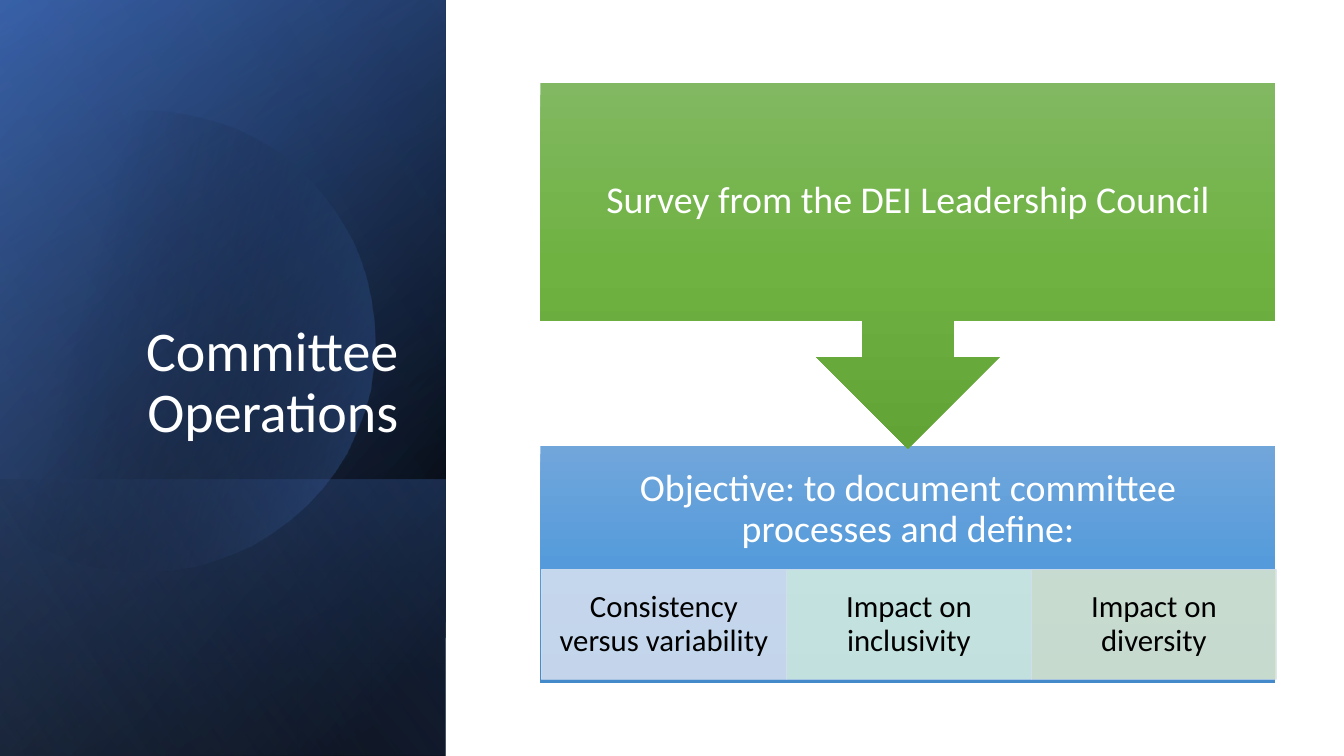
from lxml import etree
from pptx import Presentation
from pptx.dml.color import RGBColor
from pptx.enum.shapes import MSO_SHAPE
from pptx.enum.text import MSO_ANCHOR, MSO_AUTO_SIZE, PP_ALIGN
from pptx.oxml.ns import qn
from pptx.util import Pt

RECT, CALLOUT = MSO_SHAPE.RECTANGLE, MSO_SHAPE.DOWN_ARROW_CALLOUT
MIDDLE, BOTTOM = MSO_ANCHOR.MIDDLE, MSO_ANCHOR.BOTTOM
CENTER, RIGHT = PP_ALIGN.CENTER, PP_ALIGN.RIGHT

# Content
TITLE = "Committee Operations"
SURVEY = "Survey from the DEI Leadership Council"
OBJECTIVE = "Objective: to document committee processes and define:"
TOPICS = [
    ("Consistency versus variability", "D2DEEF"),
    ("Impact on inclusivity", "D0EAE1"),
    ("Impact on diversity", "D5E3CF"),
]


# Theme: gradient stops are (position %, colour, opacity %)
class Theme:
    font = "Calibri"
    light, dark, tile_line = "FFFFFF", "000000", "D2DEEF"
    title_size, box_size, tile_size = 40, 27, 22
    tile_opacity = 90
    green = [(0, "81B861", 100), (50, "6FB242", 100), (100, "62A336", 100)]
    blue = [(0, "71A6DB", 100), (50, "559BDB", 100), (100, "448ACA", 100)]
    disc = [(29, "000000", 0), (100, "4472C4", 43)]


# Layout in px, 100 to the inch
PX = 9144
SLIDE_W, SLIDE_H = 1333, 750
PANEL_W = 442
FLOW_X, FLOW_W = 536, 729
SURVEY_Y, SURVEY_H = 82, 363
OBJECTIVE_Y, OBJECTIVE_H, HEADING_H = 442, 236, 128
TILE_X, TILE_Y, TILE_W, TILE_H = 537, 565, 243, 109
BOX_INSET = 21

# Side panel layers: top, height, gradient angle, stops
PANEL_LAYERS = [
    (0, 750, 50, [(8, "000000", 100), (100, "2F5597", 100)]),
    (0, 750, 30, [(0, "000000", 0), (99, "4472C4", 46)]),
    (476, 274, 130, [(2, "4472C4", 29), (100, "000000", 30)]),
]
PANEL_GLOW = (0, 750, 120, [(0, "000000", 0), (99, "8FAADC", 11)])

# Disc outline: start point, then cubic curves; the left side is cut straight
DISC_START = (149, 110)
DISC_RIGHT = [
    ((246, 112), (335, 177), (363, 275)),
    ((398, 397), (328, 523), (207, 558)),
    ((131, 580), (53, 561), (-3, 514)),
]
DISC_CUT = [(-15, 503), (-15, 175), (0, 161)]
DISC_TOP = [
    ((23, 142), (50, 128), (80, 119)),
    ((103, 113), (126, 110), (149, 110)),
]
DISC_ANGLE = 14
CURVE_STEPS = 16


def set_opacity(color, opacity):
    if opacity < 100:
        etree.SubElement(color, qn("a:alpha"), val=str(opacity * 1000))


def fill_gradient(sp, stops, angle):
    sp.fill.gradient()
    grad = sp._element.spPr.find(qn("a:gradFill"))
    for child in list(grad):
        grad.remove(child)
    grad.set("rotWithShape", "1")
    gs_list = etree.SubElement(grad, qn("a:gsLst"))
    for position, rgb, opacity in stops:
        gs = etree.SubElement(gs_list, qn("a:gs"), pos=str(position * 1000))
        set_opacity(etree.SubElement(gs, qn("a:srgbClr"), val=rgb), opacity)
    etree.SubElement(grad, qn("a:lin"), ang=str(angle * 60000), scaled="0")


def add_box(shapes, kind, x, y, w, h):
    sp = shapes.add_shape(kind, *(v * PX for v in (x, y, w, h)))
    sp.shadow.inherit = False
    sp.line.fill.background()
    return sp


def add_panel_layer(shapes, top, height, angle, stops):
    # A flipped rectangle turned a quarter, filling the panel width
    x = (PANEL_W - height) // 2
    y = top + (height - PANEL_W) // 2
    sp = add_box(shapes, RECT, x, y, height, PANEL_W)
    sp.rotation = 90
    sp._element.spPr.find(qn("a:xfrm")).set("flipH", "1")
    fill_gradient(sp, stops, angle)


def curve_points(start, curves):
    points = []
    for c1, c2, end in curves:
        for step in range(1, CURVE_STEPS + 1):
            t = step / CURVE_STEPS
            u = 1 - t
            weights = (u ** 3, 3 * u * u * t, 3 * u * t * t, t ** 3)
            points.append(tuple(
                sum(k * p[axis] for k, p in zip(weights, (start, c1, c2, end)))
                for axis in (0, 1)))
        start = end
    return points


def add_disc(shapes):
    points = curve_points(DISC_START, DISC_RIGHT) + DISC_CUT
    points += curve_points(DISC_CUT[-1], DISC_TOP)
    outline = shapes.build_freeform(*DISC_START, scale=PX)
    outline.add_line_segments(points, close=True)
    sp = outline.convert_to_shape()
    sp.shadow.inherit = False
    sp.line.fill.background()
    fill_gradient(sp, Theme.disc, DISC_ANGLE)


def write(sp, text, size, color, align=CENTER, anchor=MIDDLE, insets=None):
    tf = sp.text_frame
    tf.text = text
    tf.word_wrap = True
    tf.auto_size = MSO_AUTO_SIZE.NONE
    tf.vertical_anchor = anchor
    if insets:
        (tf.margin_left, tf.margin_top,
         tf.margin_right, tf.margin_bottom) = (v * PX for v in insets)
    p = tf.paragraphs[0]
    p.alignment = align
    p.line_spacing = 0.9
    p.font.name = Theme.font
    p.font.size = Pt(size)
    p.font.color.rgb = RGBColor.from_string(color)


def add_tile(shapes, x, text, rgb):
    sp = add_box(shapes, RECT, x, TILE_Y, TILE_W, TILE_H)
    sp.fill.solid()
    sp.fill.fore_color.rgb = RGBColor.from_string(rgb)
    sp.line.color.rgb = RGBColor.from_string(Theme.tile_line)
    sp.line.width = Pt(0.5)
    for color in sp._element.spPr.iter(qn("a:srgbClr")):
        set_opacity(color, Theme.tile_opacity)
    write(sp, text, Theme.tile_size, Theme.dark, insets=(17, 3, 17, 3))


def main():
    prs = Presentation()
    prs.slide_width, prs.slide_height = SLIDE_W * PX, SLIDE_H * PX
    slide = prs.slides.add_slide(prs.slide_layouts[5])
    shapes = slide.shapes

    # Side panel
    for layer in PANEL_LAYERS:
        add_panel_layer(shapes, *layer)
    add_disc(shapes)
    add_panel_layer(shapes, *PANEL_GLOW)

    # Title, brought in front of the panel
    title = shapes.title
    title.left, title.top, title.width, title.height = (
        v * PX for v in (64, 184, 341, 262))
    write(title, TITLE, Theme.title_size, Theme.light, RIGHT, BOTTOM)
    shapes._spTree.append(title._element)

    # Objective with its topics
    sp = add_box(shapes, RECT, FLOW_X, OBJECTIVE_Y, FLOW_W, OBJECTIVE_H)
    fill_gradient(sp, Theme.blue, 90)
    below_heading = OBJECTIVE_H - HEADING_H + BOX_INSET
    write(sp, OBJECTIVE, Theme.box_size, Theme.light,
          insets=(BOX_INSET, BOX_INSET, BOX_INSET, below_heading))
    for i, (text, rgb) in enumerate(TOPICS):
        add_tile(shapes, TILE_X + i * TILE_W, text, rgb)

    # Survey callout pointing down to the objective
    sp = add_box(shapes, CALLOUT, FLOW_X, SURVEY_Y, FLOW_W, SURVEY_H)
    fill_gradient(sp, Theme.green, 90)
    write(sp, SURVEY, Theme.box_size, Theme.light, insets=(BOX_INSET,) * 4)

    prs.save("out.pptx")


if __name__ == "__main__":
    main()
